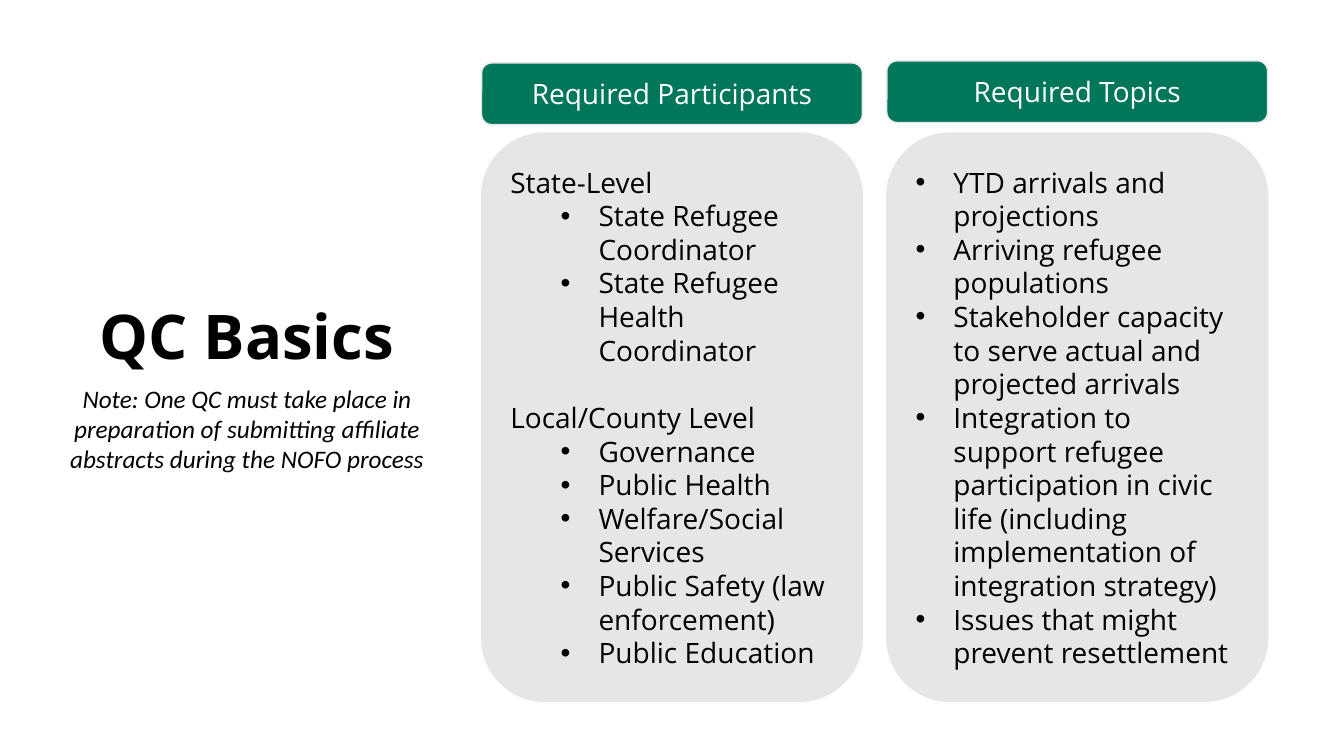
from pptx import Presentation
from pptx.dml.color import RGBColor
from pptx.enum import shapes, text
from pptx.oxml import parse_xml
from pptx.oxml.ns import nsdecls
from pptx.util import Pt

COLORS = {"text": "000000", "header": "00765A", "header_text": "FFFFFF", "panel": "E7E6E6"}
HEADING_FONT, NOTE_FONT = "Open Sans", "Calibri"

# Each list entry is (level, wording); level None is a group heading without a bullet.
PARTICIPANTS = [
    (None, "State-Level"),
    (1, "State Refugee Coordinator"),
    (1, "State Refugee Health Coordinator"),
    (None, "Local/County Level"),
    (1, "Governance"),
    (1, "Public Health"),
    (1, "Welfare/Social Services"),
    (1, "Public Safety (law enforcement)"),
    (1, "Public Education"),
]
TOPICS = [
    (0, "YTD arrivals and projections"),
    (0, "Arriving refugee populations"),
    (0, "Stakeholder capacity to serve actual and projected arrivals"),
    (0, "Integration to support refugee participation in civic life "
        "(including implementation of integration strategy)"),
    (0, "Issues that might prevent resettlement"),
]


def rgb(name):
    return RGBColor.from_string(COLORS[name])


def place(part, left, top, width, height):
    part.left, part.top, part.width, part.height = Pt(left), Pt(top), Pt(width), Pt(height)


def style(paragraph, size, font=HEADING_FONT, color="text", bold=False, italic=False):
    for run in paragraph.runs:
        run.font.size, run.font.name = Pt(size), font
        run.font.bold, run.font.italic = bold, italic
        run.font.color.rgb = rgb(color)


def rounded_box(slide, left, top, width, height, fill):
    box = slide.shapes.add_shape(shapes.MSO_SHAPE.ROUNDED_RECTANGLE,
                                 Pt(left), Pt(top), Pt(width), Pt(height))
    box.shadow.inherit = False
    box.fill.solid()
    box.fill.fore_color.rgb = rgb(fill)
    box.line.color.rgb = rgb("panel")
    box.line.width = Pt(1)
    return box


def set_bullet(paragraph, level):
    """Give a hanging bullet at the level, or none for a group heading."""
    props = paragraph._p.get_or_add_pPr()
    indent = 0 if level is None else 27
    props.set("marL", str(Pt(indent + 36 * (level or 0))))
    props.set("indent", str(Pt(-indent)))
    if level is None:
        props.append(parse_xml(f"<a:buNone {nsdecls('a')}/>"))
    else:
        props.append(parse_xml(f'<a:buFont {nsdecls("a")} typeface="Arial"/>'))
        props.append(parse_xml(f'<a:buChar {nsdecls("a")} char="•"/>'))


def add_intro(slide, left, top, width):
    title = slide.shapes.title
    place(title, left + 20, top, width - 40, 60.5)
    title.text_frame.text = "QC Basics"
    title.text_frame.vertical_anchor = text.MSO_ANCHOR.TOP
    note = slide.shapes.add_textbox(Pt(left), Pt(top + 60.5), Pt(width), Pt(72.7))
    note.text_frame.word_wrap = True
    note.text_frame.text = ("Note: One QC must take place in preparation of submitting "
                            "affiliate abstracts during the NOFO process")
    for part in (title, note):
        part.text_frame.paragraphs[0].alignment = text.PP_ALIGN.CENTER
    style(title.text_frame.paragraphs[0], 44, bold=True)
    style(note.text_frame.paragraphs[0], 18, NOTE_FONT, italic=True)


def add_column(slide, body, heading, entries, left, header_top, width):
    panel_top, panel_height, corner = 95, 406, 13.3
    rounded_box(slide, left, panel_top, width, panel_height, "panel")

    header = rounded_box(slide, left, header_top, width, 44, "header").text_frame
    header.text = heading
    header.paragraphs[0].alignment = text.PP_ALIGN.CENTER
    style(header.paragraphs[0], 20, color="header_text")

    place(body, left + corner, panel_top + corner, width - 2 * corner, panel_height - 2 * corner)
    slide.shapes._spTree.append(body._element)  # bring the list in front of its panel
    frame = body.text_frame
    frame.text = "\n".join(wording for _, wording in entries)
    frame.auto_size = text.MSO_AUTO_SIZE.NONE
    frame.vertical_anchor = text.MSO_ANCHOR.MIDDLE
    for index, (paragraph, (level, _)) in enumerate(zip(frame.paragraphs, entries)):
        paragraph.level = level or 0
        paragraph.space_before = Pt(24 if level is None and index else 0)
        set_bullet(paragraph, level)
        style(paragraph, 20)


def main():
    deck = Presentation()
    deck.slide_width, deck.slide_height = Pt(960), Pt(540)
    slide = deck.slides.add_slide(deck.slide_layouts.get_by_name("Two Content"))
    participants, topics = slide.placeholders[1], slide.placeholders[2]
    add_intro(slide, 34, 209.5, 285)
    add_column(slide, participants, "Required Participants", PARTICIPANTS, 344, 45, 272)
    add_column(slide, topics, "Required Topics", TOPICS, 633.5, 43.5, 272)
    for leftover in list(slide.placeholders):
        if not leftover.text_frame.text:
            leftover._element.getparent().remove(leftover._element)
    deck.save("out.pptx")


if __name__ == "__main__":
    main()
